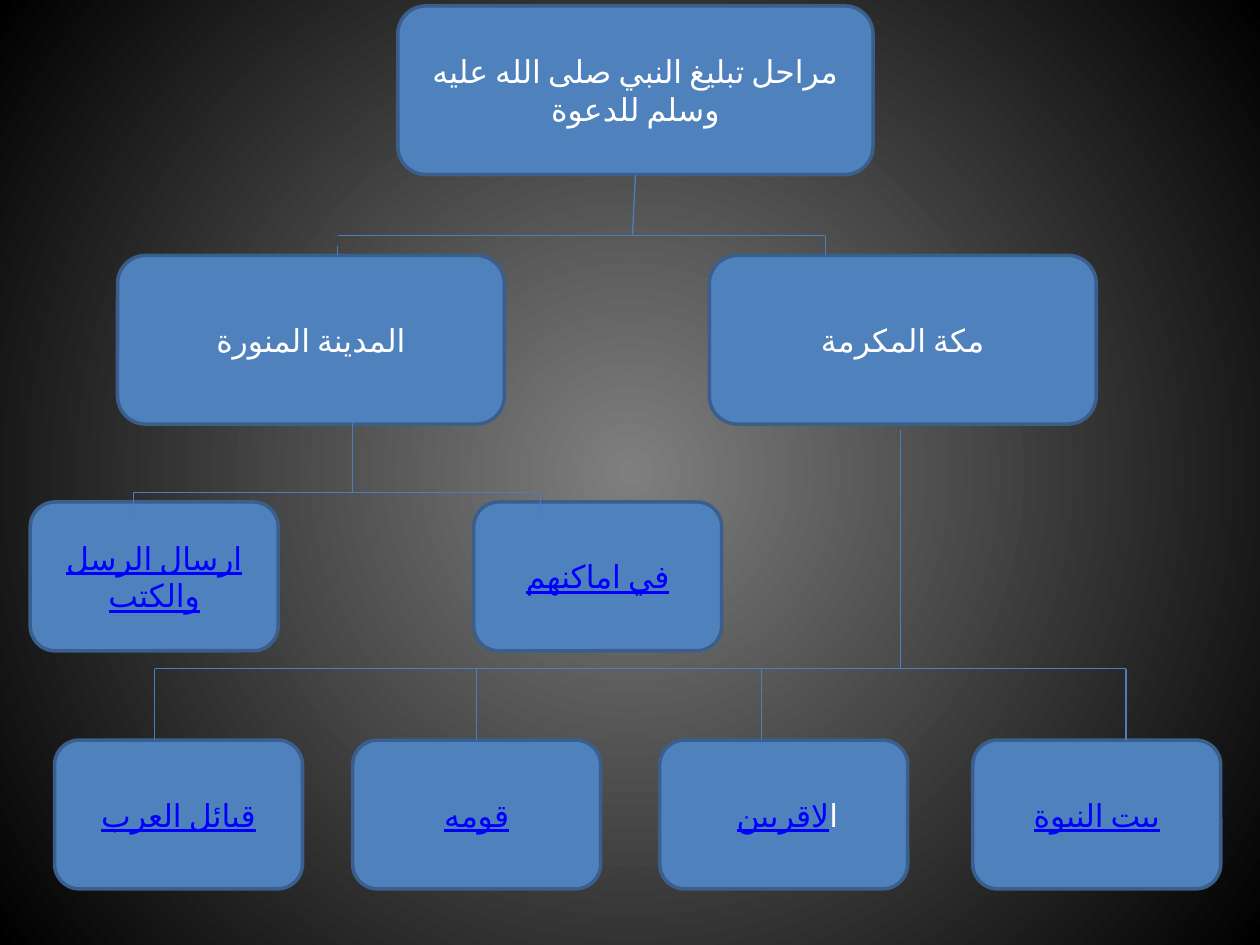
from lxml.etree import SubElement
from pptx import Presentation
from pptx.dml.color import RGBColor
from pptx.enum.shapes import MSO_CONNECTOR as CONNECTOR, MSO_SHAPE as SHAPE
from pptx.enum.text import MSO_ANCHOR as ANCHOR, PP_ALIGN as ALIGN
from pptx.oxml.ns import qn
from pptx.util import Cm, Pt

WHITE, LINK = "FFFFFF", "0000FF"
BOX_FILL, BOX_LINE, BRANCH = "4F81BD", "3A5F8C", "4B7EBC"
TOP, BOTTOM = 0, 2

SIZES = {"title": (9.58, 3.4), "city": (7.8, 3.4), "stage": (5, 3)}
BOXES = {
    "title": ("title", 8.02, 0.12, [("مراحل تبليغ النبي صلى الله عليه وسلم للدعوة", WHITE)]),
    "places": ("stage", 9.55, 10.12, [("في اماكنهم", LINK)]),
    "mecca": ("city", 14.3, 5.15, [("مكة المكرمة", WHITE)]),
    "medina": ("city", 2.37, 5.15, [("المدينة المنورة", WHITE)]),
    "household": ("stage", 19.61, 14.92, [("بيت النبوة", LINK)]),
    "relatives": ("stage", 13.3, 14.92, [("ا", WHITE), ("لاقربين", LINK), (" ", WHITE)]),
    "letters": ("stage", 0.61, 10.12, [("ارسال الرسل والكتب", LINK)]),
    "people": ("stage", 7.11, 14.92, [("قومه", LINK)]),
    "tribes": ("stage", 1.1, 14.92, [("قبائل العرب", LINK)]),
}
BRANCHES = [
    {"stem": (12.81, 3.52, 12.75), "parent": "title", "bar": 4.75,
     "drops": [(6.81, 4.95, 5.15, None), (16.64, 4.75, 5.15, None)]},
    {"stem": (7.11, 8.53, 7.11), "parent": None, "bar": 9.93,
     "drops": [(2.69, 9.93, 10.46, None), (10.9, 9.93, 10.46, None)]},
    {"stem": (18.16, 8.66, 18.16), "parent": None, "bar": 13.48,
     "drops": [(3.12, 13.48, 14.92, None), (9.61, 13.48, 14.92, "people"),
               (15.35, 13.48, 14.92, None), (22.7, 13.48, 14.92, None)]},
]


def rgb(value):
    return RGBColor.from_string(value)


def paint_background(slide, inner, outer):
    fill = slide.background.fill
    fill.gradient()
    for stop, color, position in zip(fill.gradient_stops, (inner, outer), (0, 1)):
        stop.color.rgb = rgb(color)
        stop.position = position
    gradient = slide.element.find(".//" + qn("a:gradFill"))
    gradient.remove(gradient.find(qn("a:lin")))
    circle = SubElement(gradient, qn("a:path"), {"path": "circle"})
    SubElement(circle, qn("a:fillToRect"), dict.fromkeys("ltrb", "50000"))


def add_text(paragraph, text, color=WHITE, size=18, font="Calibri", language="ar-SA"):
    run = paragraph.add_run()
    run.text = text
    run.font.name = font
    run.font.size = Pt(size)
    run.font.color.rgb = rgb(color)
    run.font.underline = color == LINK
    properties = run._r.get_or_add_rPr()
    properties.set("lang", language)
    SubElement(properties, qn("a:cs"), {"typeface": font})


def add_box(slide, kind, left, top, runs):
    width, height = SIZES[kind]
    shape = slide.shapes.add_shape(
        SHAPE.ROUNDED_RECTANGLE, Cm(left), Cm(top), Cm(width), Cm(height))
    shape.shadow.inherit = False
    shape.fill.solid()
    shape.fill.fore_color.rgb = rgb(BOX_FILL)
    shape.line.color.rgb = rgb(BOX_LINE)
    shape.line.width = Pt(2)
    shape.text_frame.word_wrap = True
    shape.text_frame.vertical_anchor = ANCHOR.MIDDLE
    paragraph = shape.text_frame.paragraphs[0]
    paragraph.alignment = ALIGN.CENTER
    paragraph._p.get_or_add_pPr().set("rtl", "1")
    for text, color in runs:
        add_text(paragraph, text, color=color)
    return shape


def add_line(slide, x1, y1, x2, y2, begin=None, end=None):
    line = slide.shapes.add_connector(CONNECTOR.STRAIGHT, Cm(x1), Cm(y1), Cm(x2), Cm(y2))
    line.line.color.rgb = rgb(BRANCH)
    line.line.width = Pt(0.75)
    SubElement(line._element.spPr, qn("a:effectLst"))
    if begin is not None:
        line.begin_connect(begin, BOTTOM)
    if end is not None:
        line.end_connect(end, TOP)


def main():
    presentation = Presentation()
    presentation.slide_width, presentation.slide_height = Cm(25.4), Cm(19.05)
    slide = presentation.slides.add_slide(presentation.slide_layouts[6])
    paint_background(slide, "7F7F7F", "000000")
    boxes = {name: add_box(slide, *box) for name, box in BOXES.items()}
    for branch in BRANCHES:
        x1, y1, x2 = branch["stem"]
        bar, drops = branch["bar"], branch["drops"]
        add_line(slide, x1, y1, x2, bar, begin=boxes.get(branch["parent"]))
        add_line(slide, drops[0][0], bar, drops[-1][0], bar)
        for x, start, stop, child in drops:
            add_line(slide, x, start, x, stop, end=boxes.get(child))
    presentation.save("out.pptx")


if __name__ == "__main__":
    main()
